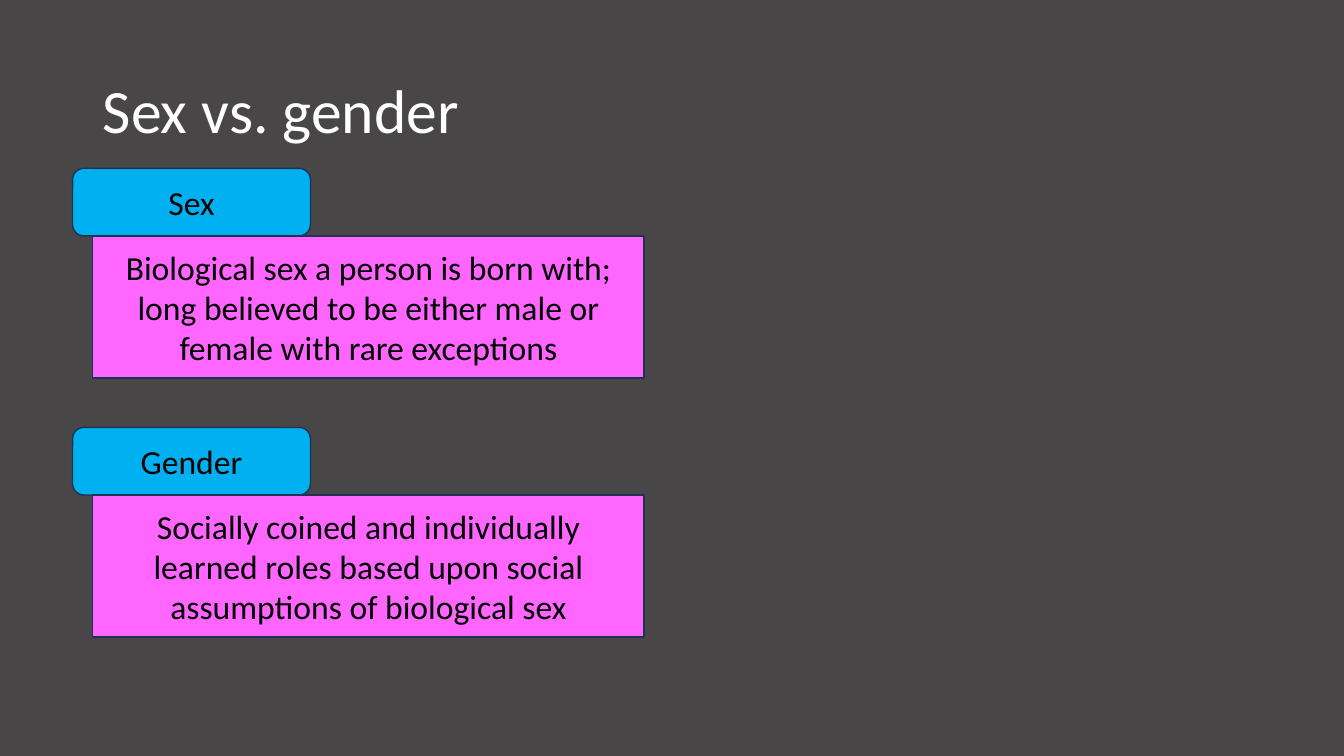
"""Build a slide that sets two terms, sex and gender, above their meanings."""
from dataclasses import dataclass

from pptx import Presentation
from pptx import util as u
from pptx.dml.color import RGBColor
from pptx.enum import shapes, text


@dataclass(frozen=True)
class Theme:
    font: str = "Calibri"
    back: str = "484646"
    light: str = "FFFFFF"
    dark: str = "000000"
    edge: str = "1E3256"
    term: str = "00B0F0"
    note: str = "FF66FF"
    head: int = 44
    body: int = 24


@dataclass(frozen=True)
class Box:
    left: float
    top: float
    width: float
    height: float


@dataclass(frozen=True)
class Entry:
    term: str
    note: str


THEME = Theme()
WIDE, HIGH = u.Inches(13.33), u.Inches(7.5)
COL, ROW = WIDE / 100, HIGH / 100
HEAD = Box(6.9, 5.33, 86.27, 19.33)
TERM = Box(5.4, 22.27, 17.7, 8.93)
NOTE = Box(6.9, TERM.top + TERM.height, 41.03, 18.8)
STEP = 34.27
ENTRIES = (
    Entry("Sex", "Biological sex a person is born with; long believed to be "
                 "either male or female with rare exceptions"),
    Entry("Gender", "Socially coined and individually learned roles based upon "
                    "social assumptions of biological sex"),
)


def place(box: Box, down: float = 0) -> tuple[int, int, int, int]:
    return (round(box.left * COL), round((box.top + down) * ROW),
            round(box.width * COL), round(box.height * ROW))


def write(shape, words: str, size: int, ink: str, align) -> None:
    frame = shape.text_frame
    frame.word_wrap = True
    frame.auto_size = text.MSO_AUTO_SIZE.NONE
    frame.vertical_anchor = text.MSO_ANCHOR.MIDDLE
    para = frame.paragraphs[0]
    para.alignment = align
    run = para.add_run()
    run.text = words
    run.font.name = THEME.font
    run.font.size = u.Pt(size)
    run.font.color.rgb = RGBColor.from_string(ink)


def draw_head(slide, words: str) -> None:
    head = slide.shapes.title
    head.left, head.top, head.width, head.height = place(HEAD)
    write(head, words, THEME.head, THEME.light, text.PP_ALIGN.LEFT)
    head.text_frame.paragraphs[0].line_spacing = 0.9


def draw_box(slide, kind, box: Box, down: float, fill: str, words: str) -> None:
    shape = slide.shapes.add_shape(kind, *place(box, down))
    shape.shadow.inherit = False
    shape.fill.solid()
    shape.fill.fore_color.rgb = RGBColor.from_string(fill)
    shape.line.color.rgb = RGBColor.from_string(THEME.edge)
    shape.line.width = u.Pt(1)
    write(shape, words, THEME.body, THEME.dark, text.PP_ALIGN.CENTER)


def main() -> None:
    deck = Presentation()
    deck.slide_width, deck.slide_height = WIDE, HIGH
    slide = deck.slides.add_slide(deck.slide_layouts.get_by_name("Title Only"))
    slide.background.fill.solid()
    slide.background.fill.fore_color.rgb = RGBColor.from_string(THEME.back)
    draw_head(slide, "Sex vs. gender")
    kinds = shapes.MSO_SHAPE
    for index, entry in enumerate(ENTRIES):
        down = index * STEP
        draw_box(slide, kinds.ROUNDED_RECTANGLE, TERM, down, THEME.term, entry.term)
        draw_box(slide, kinds.RECTANGLE, NOTE, down, THEME.note, entry.note)
    deck.save("out.pptx")


if __name__ == "__main__":
    main()
